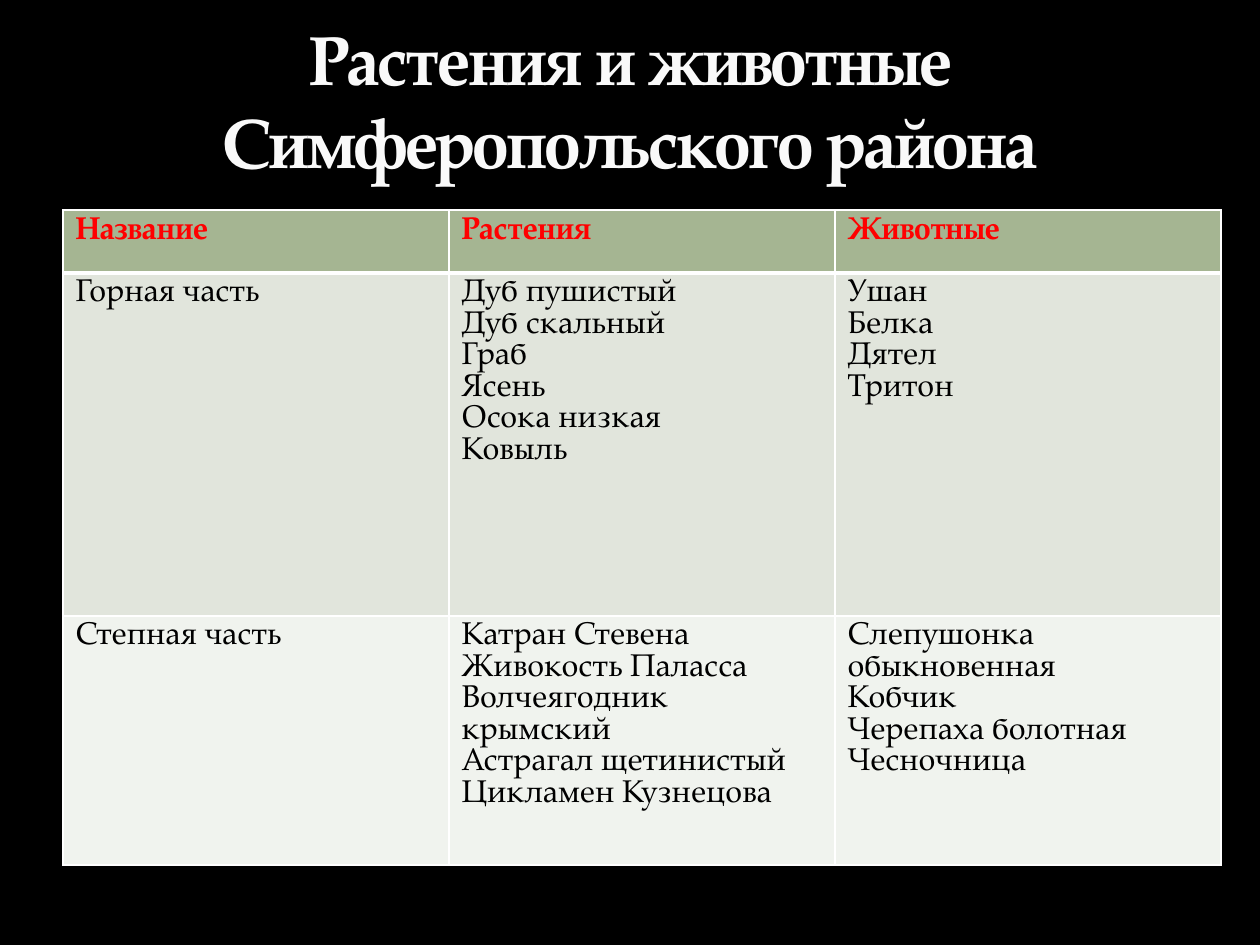
from lxml import etree
from pptx import Presentation
from pptx.dml.color import RGBColor
from pptx.enum import text
from pptx.oxml import ns
from pptx.util import Pt

PX_PER_INCH = 126
FONT = "TeX Gyre Pagella"
BORDER_COLOR = "FFFFFF"
SIDES = ("lnL", "lnR", "lnT", "lnB")


def px(length):
    return round(length * 914400 / PX_PER_INCH)


def color(value):
    return RGBColor.from_string(value)


class SlideBuilder:
    def __init__(self, presentation, background):
        self.slide = presentation.slides.add_slide(presentation.slide_layouts[6])
        self.slide.background.fill.solid()
        self.slide.background.fill.fore_color.rgb = color(background)

    def add_lines(self, frame, lines, font, layout):
        for index, line in enumerate(lines):
            paragraph = frame.paragraphs[0] if index == 0 else frame.add_paragraph()
            for name, value in layout.items():
                setattr(paragraph, name, value)
            run = paragraph.add_run()
            run.text = line
            for name, value in font.items():
                if name == "color":
                    run.font.color.rgb = color(value)
                else:
                    setattr(run.font, name, value)

    def title(self, box, line, font, layout, tracking):
        frame = self.slide.shapes.add_textbox(*map(px, box)).text_frame
        frame.word_wrap = True
        frame.vertical_anchor = text.MSO_ANCHOR.BOTTOM
        self.add_lines(frame, [line], font, layout)
        for run in frame.paragraphs[0].runs:
            run._r.get_or_add_rPr().set("spc", str(tracking))

    def borders(self, cell, widths):
        properties = cell._tc.get_or_add_tcPr()
        for position, side in enumerate(SIDES):
            line = etree.Element(ns.qn(f"a:{side}"), w=str(int(Pt(widths.get(side, 1)))))
            fill = etree.SubElement(line, ns.qn("a:solidFill"))
            etree.SubElement(fill, ns.qn("a:srgbClr"), val=BORDER_COLOR)
            properties.insert(position, line)

    def table(self, left, top, column_width, row_heights, rows, styles):
        columns = len(rows[0])
        table = self.slide.shapes.add_table(
            len(rows), columns, px(left), px(top),
            px(column_width * columns), px(sum(row_heights))).table
        for column in table.columns:
            column.width = px(column_width)
        for r, (height, row, style) in enumerate(zip(row_heights, rows, styles)):
            table.rows[r].height = px(height)
            for c, lines in enumerate(row):
                cell = table.cell(r, c)
                cell.fill.solid()
                cell.fill.fore_color.rgb = color(style["fill"])
                self.borders(cell, style["borders"])
                self.add_lines(cell.text_frame, lines, style["font"],
                               {"line_spacing": Pt(18)})


def main():
    presentation = Presentation()
    presentation.slide_width, presentation.slide_height = px(1260), px(945)
    builder = SlideBuilder(presentation, "000000")

    # Table of plants and animals by part of the district
    rows = [
        [["Название"], ["Растения"], ["Животные"]],
        [["Горная часть"],
         ["Дуб пушистый", "Дуб скальный", "Граб", "Ясень",
          "Осока низкая", "Ковыль"],
         ["Ушан", "Белка", "Дятел", "Тритон"]],
        [["Степная часть"],
         ["Катран Стевена", "Живокость Паласса", "Волчеягодник крымский",
          "Астрагал щетинистый", "Цикламен Кузнецова"],
         ["Слепушонка обыкновенная", "Кобчик", "Черепаха болотная",
          "Чесночница"]],
    ]
    body = {"name": FONT, "size": Pt(18), "bold": False, "color": "000000"}
    header = {**body, "bold": True, "color": "FF0000"}
    styles = [
        {"fill": "A5B592", "font": header, "borders": {"lnB": 3}},
        {"fill": "E1E5DC", "font": body, "borders": {"lnT": 3}},
        {"fill": "F0F3EE", "font": body, "borders": {}},
    ]
    builder.table(63, 210, 386, [63, 343, 249], rows, styles)

    # Title
    builder.title(
        (63, 21, 1134, 168), "Растения и животные Симферопольского района",
        {"name": FONT, "size": Pt(39.6), "bold": True, "color": "F9F9F9"},
        {"alignment": text.PP_ALIGN.CENTER}, tracking=-100)

    presentation.save("out.pptx")


if __name__ == "__main__":
    main()
